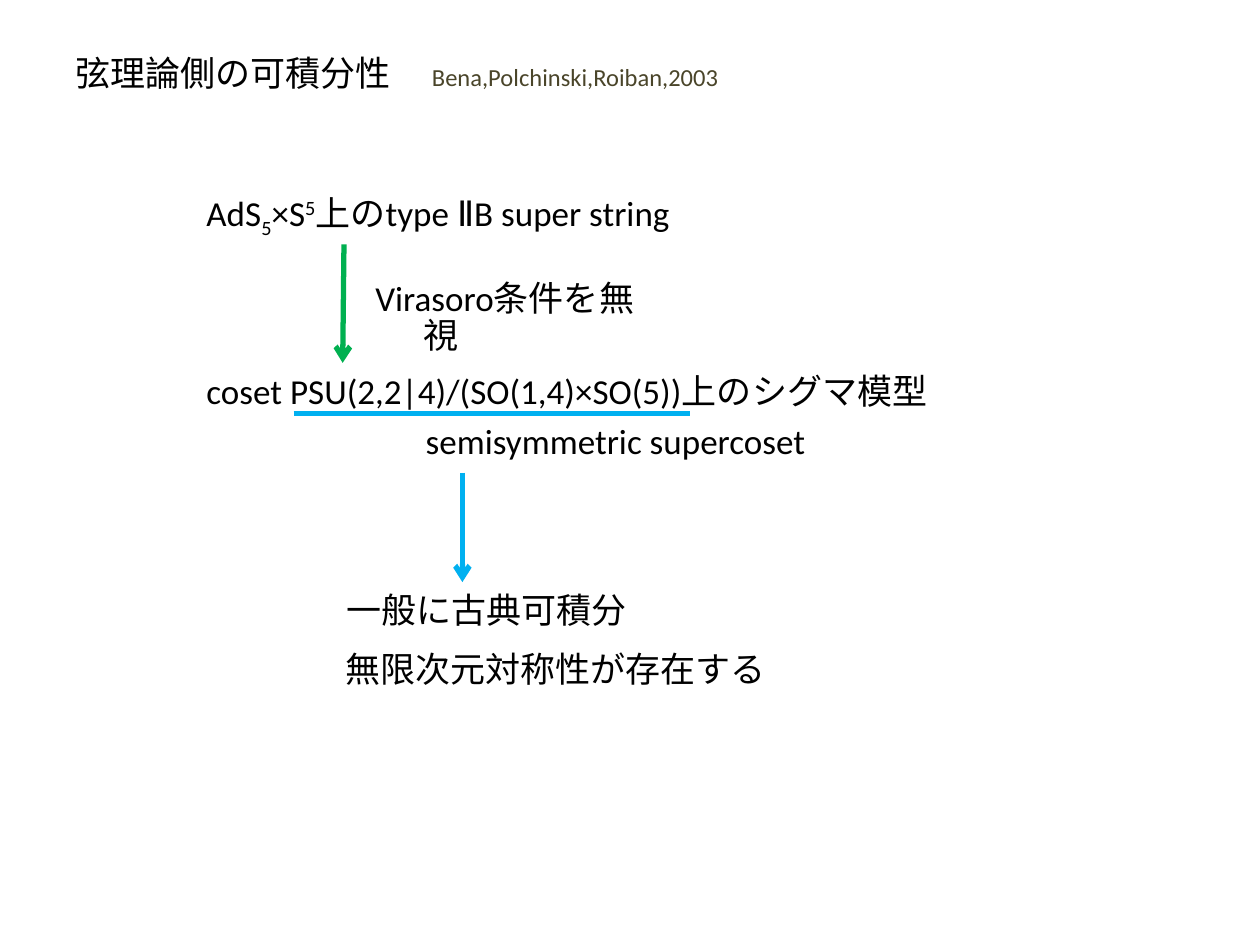
from pptx import Presentation
from pptx.dml.color import RGBColor
from pptx.enum.shapes import MSO_CONNECTOR as Conn
from pptx.oxml.ns import qn
from pptx.oxml.xmlchemy import OxmlElement as Node
from pptx.util import Inches, Pt

BLACK = RGBColor(0x00, 0x00, 0x00)
BROWN = RGBColor(0x4A, 0x45, 0x2A)
GREEN = RGBColor(0x00, 0xB0, 0x50)
BLUE = RGBColor(0x00, 0xB0, 0xF0)
HANG = Inches(0.38)


def add_text(slide, box, runs, size=20, color=BLACK, lead=1.0):
    frame = slide.shapes.add_textbox(*map(Inches, box)).text_frame
    frame.word_wrap = True
    para = frame.paragraphs[0]
    form = {"space_before": Pt(size * 0.2), "line_spacing": lead}
    for key, value in form.items():
        setattr(para, key, value)
    props = para._p.get_or_add_pPr()
    for key, value in {"marL": HANG, "indent": -HANG}.items():
        props.set(key, str(int(value)))
    for text, shift in runs:
        run = para.add_run()
        run.text = text
        for key, value in {"name": "Calibri", "size": Pt(size)}.items():
            setattr(run.font, key, value)
        run.font.color.rgb = color
        if shift:
            run.font._element.set("baseline", str(shift * 1000))


def add_line(slide, start, end, color, arrow=False):
    line = slide.shapes.add_connector(
        Conn.STRAIGHT, *map(Inches, (*start, *end)))
    line.line.width = Pt(3)
    line.line.color.rgb = color
    if arrow:
        tail = Node("a:tailEnd")
        tail.set("type", "arrow")
        line.line._get_or_add_ln().append(tail)
    line._element.find(qn("p:spPr")).append(Node("a:effectLst"))


def add_head(slide, left, top):
    add_text(slide, (left, top, 2.77, 0.43), [("弦理論側の可積分性", 0)])
    add_text(slide, (left + 2.83, top + 0.08, 2.61, 0.38),
             [("Bena,Polchinski,Roiban,2003", 0)], size=14, color=BROWN)


def add_model(slide, left, top):
    add_text(slide, (left, top, 4.49, 0.47),
             [("AdS", 0), ("5", -25), ("×S", 0), ("5", 30),
              ("上のtype ⅡB super string", 0)])
    add_line(slide, (left + 1.19, top + 0.47), (left + 1.18, top + 1.41),
             GREEN, arrow=True)
    add_text(slide, (left + 1.34, top + 0.71, 2.52, 0.43),
             [("Virasoro条件を無視", 0)], lead=0.9)
    add_text(slide, (left, top + 1.41, 6.05, 0.47),
             [("coset PSU(2,2|4)/(SO(1,4)×SO(5))上のシグマ模型", 0)])
    add_line(slide, (left + 0.79, top + 1.81), (left + 3.94, top + 1.81), BLUE)
    add_text(slide, (left + 1.74, top + 1.85, 3.39, 0.43),
             [("semisymmetric supercoset", 0)], lead=0.9)


def add_result(slide, left, top):
    add_line(slide, (left + 1.03, top), (left + 1.03, top + 0.87),
             BLUE, arrow=True)
    add_text(slide, (left + 0.01, top + 0.87, 2.44, 0.47),
             [("一般に古典可積分", 0)])
    add_text(slide, (left, top + 1.34, 3.54, 0.47),
             [("無限次元対称性が存在する", 0)])


def main():
    deck = Presentation()
    deck.slide_width, deck.slide_height = Inches(10), Inches(7.5)
    slide = deck.slides.add_slide(deck.slide_layouts[6])
    add_head(slide, 0.5, 0.36)
    add_model(slide, 1.54, 1.47)
    add_result(slide, 2.64, 3.75)
    deck.save("out.pptx")


if __name__ == "__main__":
    main()
